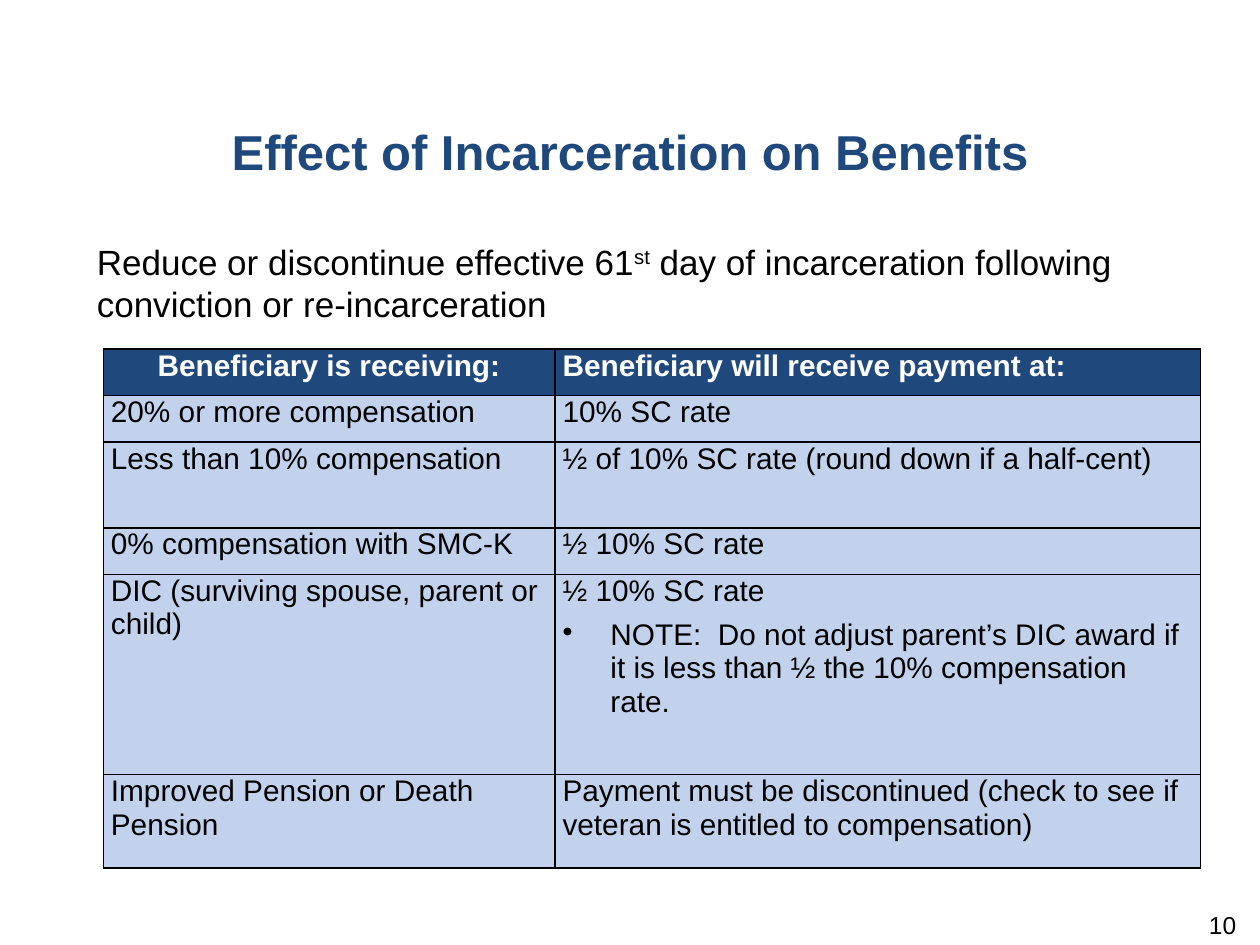
import dataclasses

import lxml.etree
import pptx
import pptx.dml.color
import pptx.enum.text
import pptx.oxml.ns
import pptx.util

ALIGN = pptx.enum.text.PP_ALIGN
Inches = pptx.util.Inches
Pt = pptx.util.Pt


@dataclasses.dataclass(frozen=True)
class Theme:
    font: str = "Arial"
    navy: str = "1F497D"
    pale: str = "C2D2EC"
    black: str = "000000"
    white: str = "FFFFFF"
    title_size: int = 28
    body_size: int = 20
    table_size: int = 17
    number_size: int = 14
    space_after: int = 6
    border_width: int = 1


def apply_format(target, values):
    for name, value in values.items():
        setattr(target, name, value)


def add_element(parent, tag, **attributes):
    return lxml.etree.SubElement(parent, pptx.oxml.ns.qn(tag), attributes)


class SlideBuilder:
    def __init__(self, presentation, theme):
        self.theme = theme
        self.width = presentation.slide_width
        self.height = presentation.slide_height
        self.slide = presentation.slides.add_slide(presentation.slide_layouts[6])

    def across(self, percent):
        return round(self.width * percent / 100)

    def down(self, percent):
        return round(self.height * percent / 100)

    def place(self, left, top, width, height):
        return self.across(left), self.down(top), self.across(width), self.down(height)

    def fill_paragraph(self, paragraph, pieces, size, color, bold=False, align=ALIGN.LEFT):
        apply_format(paragraph, {"alignment": align, "space_after": Pt(self.theme.space_after)})
        for index, piece in enumerate(pieces):
            run = paragraph.add_run()
            run.text = piece
            apply_format(run.font, {"name": self.theme.font, "size": Pt(size), "bold": bold})
            run.font.color.rgb = pptx.dml.color.RGBColor.from_string(color)
            if index % 2:
                run._r.get_or_add_rPr().set("baseline", "30000")

    def text(self, box, pieces, size, color, inset=0.05, **style):
        frame = self.slide.shapes.add_textbox(*self.place(*box)).text_frame
        apply_format(frame, {"word_wrap": True, "margin_top": Inches(inset)})
        self.fill_paragraph(frame.paragraphs[0], pieces, size, color, **style)

    def bullet(self, paragraph):
        properties = paragraph._p.get_or_add_pPr()
        indent = Inches(0.38)
        properties.set("marL", str(indent))
        properties.set("indent", str(-indent))
        add_element(properties, "a:buChar", char="•")
        tabs = add_element(properties, "a:tabLst")
        add_element(tabs, "a:tab", pos=str(Inches(0.25)), algn="l")

    def border(self, cell):
        properties = cell._tc.get_or_add_tcPr()
        for side in ("a:lnL", "a:lnR", "a:lnT", "a:lnB"):
            line = add_element(properties, side, w=str(Pt(self.theme.border_width)))
            fill = add_element(line, "a:solidFill")
            add_element(fill, "a:srgbClr", val=self.theme.black)

    def cell(self, cell, lines, header, align):
        theme = self.theme
        margins = {"margin_left": Inches(0.06), "margin_right": Inches(0.06),
                   "margin_top": 0, "margin_bottom": 0}
        apply_format(cell, margins)
        self.border(cell)
        cell.fill.solid()
        cell.fill.fore_color.rgb = pptx.dml.color.RGBColor.from_string(
            theme.navy if header else theme.pale)
        for index, line in enumerate(lines):
            paragraph = cell.text_frame.add_paragraph() if index else cell.text_frame.paragraphs[0]
            if index:
                self.bullet(paragraph)
            self.fill_paragraph(paragraph, [line], theme.table_size,
                                theme.white if header else theme.black, header, align)

    def table(self, left, top, columns, heights, rows):
        box = self.place(left, top, sum(columns), sum(heights))
        table = self.slide.shapes.add_table(len(rows), len(columns), *box).table
        for column, width in zip(table.columns, columns):
            column.width = self.across(width)
        for row_index, (row, height) in enumerate(zip(rows, heights)):
            table.rows[row_index].height = self.down(height)
            for column_index, lines in enumerate(row):
                header = row_index == 0
                align = ALIGN.CENTER if header and column_index == 0 else ALIGN.LEFT
                self.cell(table.cell(row_index, column_index), lines, header, align)


BENEFIT_ROWS = [
    (["Beneficiary is receiving:"], ["Beneficiary will receive payment at:"]),
    (["20% or more compensation"], ["10% SC rate"]),
    (["Less than 10% compensation"], ["½ of 10% SC rate (round down if a half-cent)"]),
    (["0% compensation with SMC-K"], ["½ 10% SC rate"]),
    (["DIC (surviving spouse, parent or child)"],
     ["½ 10% SC rate",
      "NOTE:  Do not adjust parent’s DIC award if it is less than ½ the 10% compensation rate."]),
    (["Improved Pension or Death Pension"],
     ["Payment must be discontinued (check to see if veteran is entitled to compensation)"]),
]


def main():
    presentation = pptx.Presentation()
    apply_format(presentation, {"slide_width": Inches(10), "slide_height": Inches(7.5)})
    theme = Theme()
    builder = SlideBuilder(presentation, theme)
    builder.text((0, 11.6, 100, 15.87), ["Effect of Incarceration on Benefits"],
                 theme.title_size, theme.navy, inset=0.09, bold=True, align=ALIGN.CENTER)
    builder.text((6.7, 24.8, 90, 9.73),
                 ["Reduce or discontinue effective 61", "st",
                  " day of incarceration following conviction or re-incarceration"],
                 theme.body_size, theme.black)
    builder.table(8.2, 36.93, [35.85, 51.25], [4.93, 4.93, 9.07, 4.93, 21.2, 9.87], BENEFIT_ROWS)
    builder.text((75.8, 96.27, 23.3, 5.33), ["10"], theme.number_size, theme.black,
                 inset=0, align=ALIGN.RIGHT)
    presentation.save("out.pptx")


if __name__ == "__main__":
    main()
